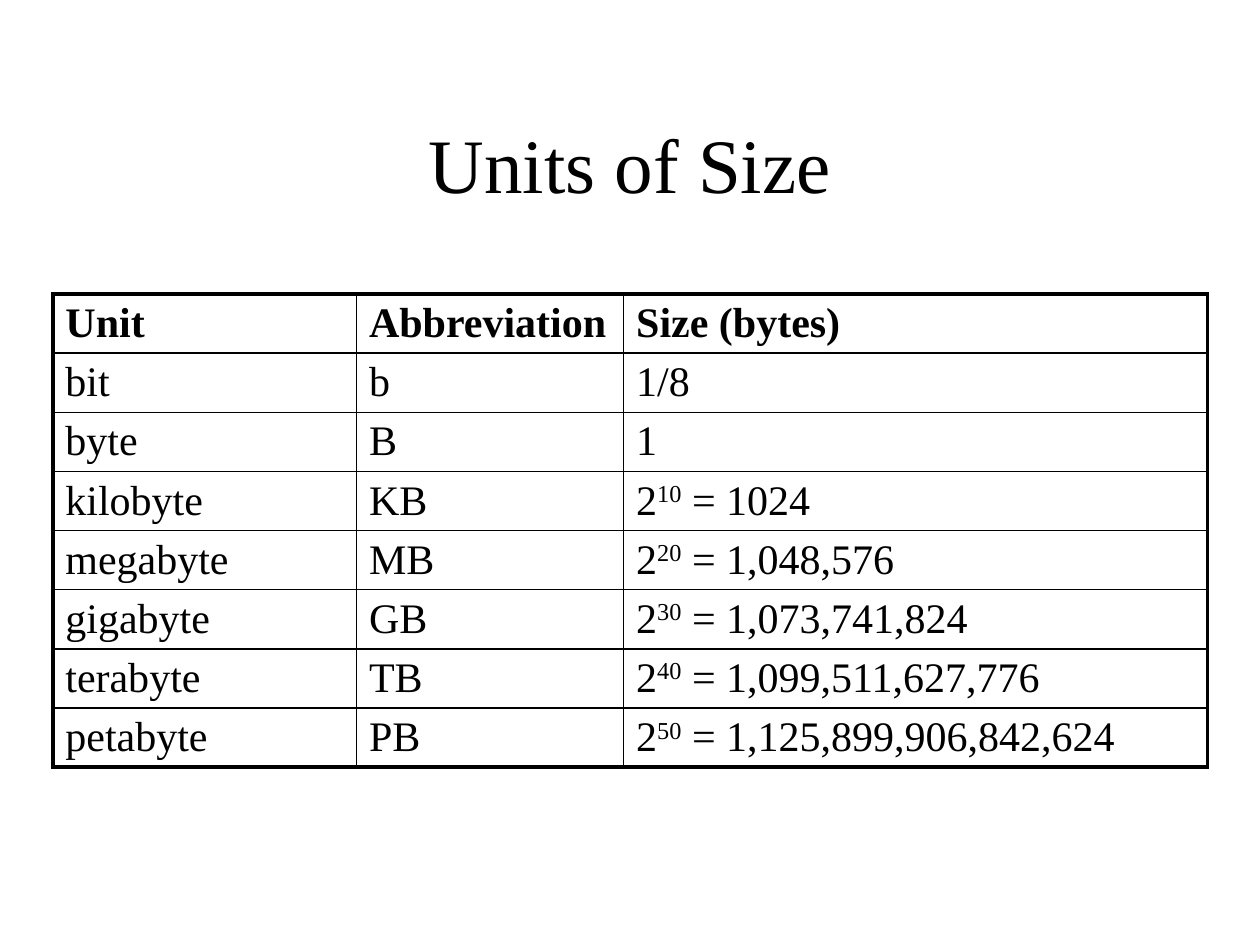
from dataclasses import dataclass

from lxml.etree import SubElement
from pptx import Presentation
from pptx.dml.color import RGBColor
from pptx.enum.text import MSO_ANCHOR, PP_ALIGN
from pptx.oxml.ns import qn
from pptx.slide import Slide
from pptx.table import Table, _Cell
from pptx.text.text import _Paragraph
from pptx.util import Pt


@dataclass(frozen=True)
class Theme:
    font: str = "Times New Roman"
    ink: str = "000000"
    title: float = 44
    body: float = 24
    thin: float = 1
    thick: float = 2.25
    lift: int = 30000


@dataclass(frozen=True)
class Unit:
    name: str
    abbr: str
    size: str
    power: str = ""
    value: str = ""
    bold: bool = False


THEME = Theme()
UNITS = [
    Unit("Unit", "Abbreviation", "Size (bytes)", bold=True),
    Unit("bit", "b", "1/8"),
    Unit("byte", "B", "1"),
    Unit("kilobyte", "KB", "2", "10", " = 1024"),
    Unit("megabyte", "MB", "2", "20", " = 1,048,576"),
    Unit("gigabyte", "GB", "2", "30", " = 1,073,741,824"),
    Unit("terabyte", "TB", "2", "40", " = 1,099,511,627,776"),
    Unit("petabyte", "PB", "2", "50", " = 1,125,899,906,842,624"),
]
WIDTHS = (173.5, 152.7, 333.5)
ROW_HEIGHT = 33.8


def add_run(para: _Paragraph, text: str, size: float,
            bold: bool = False, lift: int = 0) -> None:
    """Append a run; lift raises it as a superscript, in 1/1000 percent."""
    run = para.add_run()
    run.text = text
    run.font.name = THEME.font
    run.font.size = Pt(size)
    run.font.bold = bold
    run.font.color.rgb = RGBColor.from_string(THEME.ink)
    if lift:
        run.font._element.set("baseline", str(lift))


def add_title(slide: Slide, text: str) -> None:
    title = slide.shapes.title
    title.left, title.top = Pt(54), Pt(48)
    title.width, title.height = Pt(612), Pt(90)
    title.text_frame.vertical_anchor = MSO_ANCHOR.MIDDLE
    para = title.text_frame.paragraphs[0]
    para.alignment = PP_ALIGN.CENTER
    add_run(para, text, THEME.title)


def set_borders(cell: _Cell, outer: dict[str, bool]) -> None:
    """Draw the four sides, thick where the side is on the table's edge."""
    props = cell._tc.get_or_add_tcPr()
    for side, edge in outer.items():
        width = Pt(THEME.thick if edge else THEME.thin)
        line = SubElement(props, qn(f"a:ln{side}"), w=str(width))
        fill = SubElement(line, qn("a:solidFill"))
        SubElement(fill, qn("a:srgbClr"), val=THEME.ink)


def fill_row(table: Table, row: int, unit: Unit) -> None:
    last_row, last_col = len(UNITS) - 1, len(WIDTHS) - 1
    texts = (unit.name, unit.abbr, unit.size)
    for col, text in enumerate(texts):
        cell = table.cell(row, col)
        set_borders(cell, {"L": col == 0, "R": col == last_col,
                           "T": row == 0, "B": row == last_row})
        cell.fill.background()
        para = cell.text_frame.paragraphs[0]
        add_run(para, text, THEME.body, unit.bold)
        if col == last_col and unit.power:
            add_run(para, unit.power, THEME.body, lift=THEME.lift)
            add_run(para, unit.value, THEME.body)


def add_units(slide: Slide) -> None:
    table = slide.shapes.add_table(
        len(UNITS), len(WIDTHS), Pt(30.2), Pt(168),
        Pt(sum(WIDTHS)), Pt(ROW_HEIGHT * len(UNITS))).table
    table.first_row = table.horz_banding = False
    for column, width in zip(table.columns, WIDTHS):
        column.width = Pt(width)
    for row, unit in enumerate(UNITS):
        table.rows[row].height = Pt(ROW_HEIGHT)
        fill_row(table, row, unit)


def main() -> None:
    deck = Presentation()
    deck.slide_width, deck.slide_height = Pt(720), Pt(540)
    slide = deck.slides.add_slide(deck.slide_layouts[5])
    add_title(slide, "Units of Size")
    add_units(slide)
    deck.save("out.pptx")


if __name__ == "__main__":
    main()
